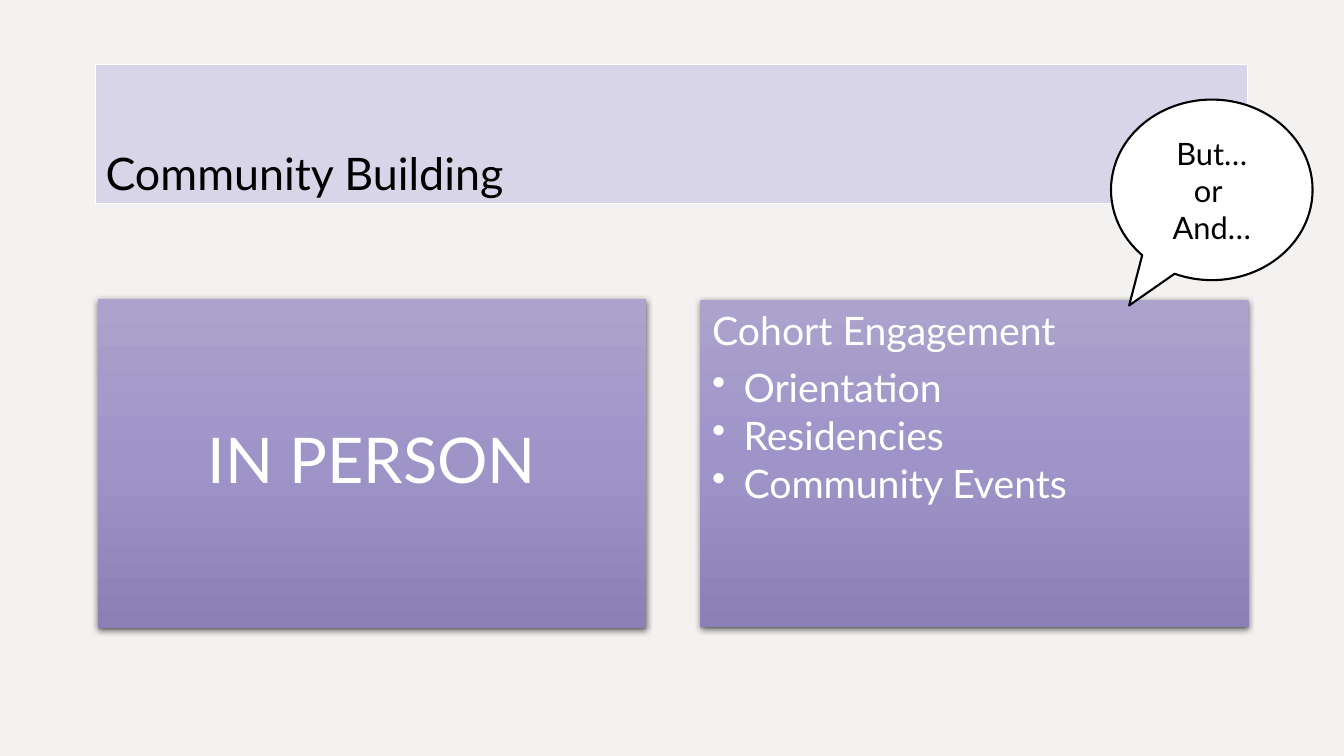
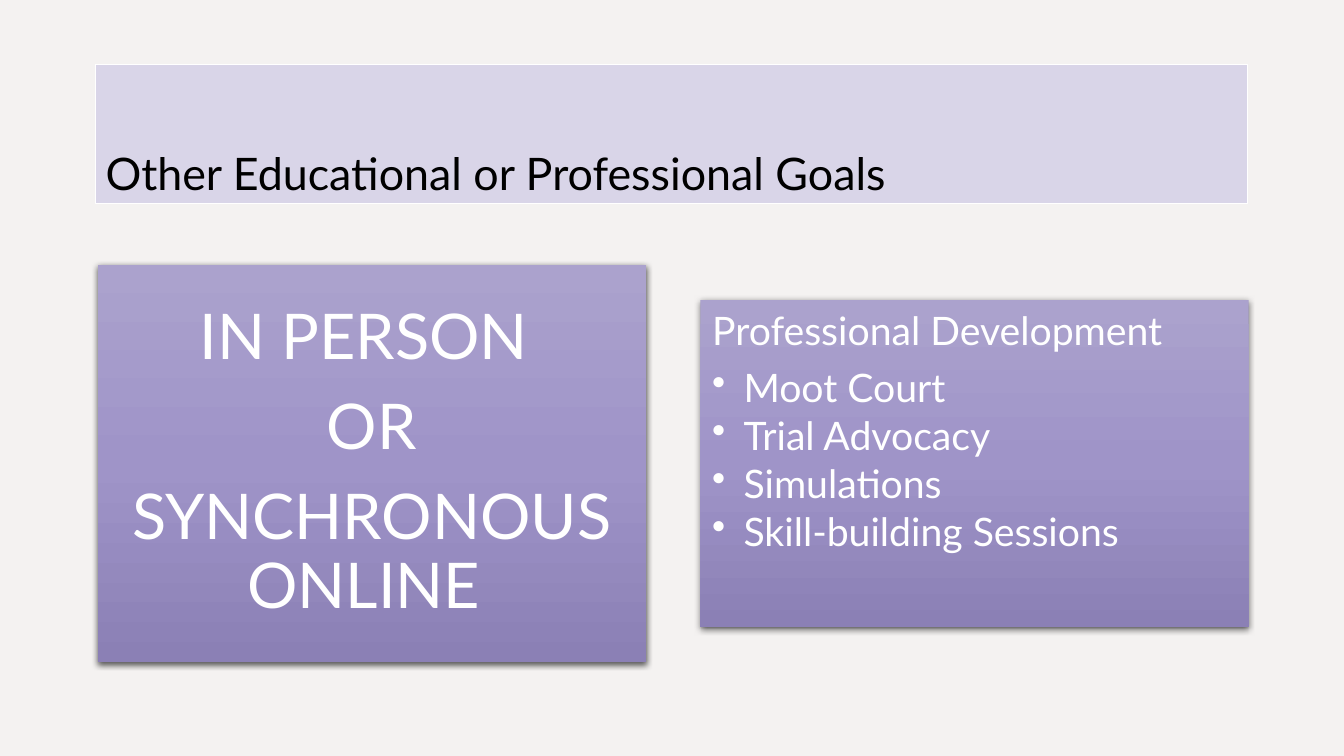
"""Build two slides on in-person and online learning goals."""
from copy import deepcopy
from dataclasses import dataclass

from lxml import etree
from pptx import Presentation
from pptx.dml.color import RGBColor
from pptx.enum.shapes import MSO_SHAPE
from pptx.enum.text import MSO_ANCHOR, PP_ALIGN
from pptx.oxml.ns import qn
from pptx.util import Cm, Pt

RECTANGLE = MSO_SHAPE.RECTANGLE
BUBBLE = MSO_SHAPE.OVAL_CALLOUT
TOP, MIDDLE, BOTTOM = MSO_ANCHOR.TOP, MSO_ANCHOR.MIDDLE, MSO_ANCHOR.BOTTOM
LEFT, CENTER = PP_ALIGN.LEFT, PP_ALIGN.CENTER

BLACK = RGBColor(0x00, 0x00, 0x00)
WHITE = RGBColor(0xFF, 0xFF, 0xFF)
BACKDROP = RGBColor(0xF4, 0xF2, 0xF1)
BAND = RGBColor(0xD9, 0xD5, 0xE8)
CARD_GRADIENT = (
    (0.0, RGBColor(0xAB, 0xA2, 0xCD)),
    (0.5, RGBColor(0x9F, 0x94, 0xC8)),
    (1.0, RGBColor(0x8B, 0x80, 0xB5)),
)

FONT = "Lato"
CARD_WIDTH = Cm(13.82)
CARD_MIDDLE = Cm(11.68)
FORMAT_LEFT, TOPIC_LEFT = Cm(2.46), Cm(17.65)
TOPIC_HEIGHT = Cm(8.23)
BULLET_INDENT = Cm(0.79)
HEADING_GAP, BULLET_GAP = 0.35, 0.15


@dataclass(frozen=True)
class GoalSlide:
    title: str
    formats: tuple[str, ...]
    format_height: int
    topic: str
    activities: tuple[str, ...]
    remark: tuple[str, ...] = ()


GOAL_SLIDES = (
    GoalSlide("Community Building", ("IN PERSON",), Cm(8.28),
              "Cohort Engagement",
              ("Orientation", "Residencies", "Community Events"),
              ("But…", "or ", "And…")),
    GoalSlide("Other Educational or Professional Goals",
              ("IN PERSON ", "OR", "SYNCHRONOUS ONLINE "), Cm(10.01),
              "Professional Development",
              ("Moot Court", "Trial Advocacy", "Simulations",
               "Skill-building Sessions")),
)


def write(shape, lines: tuple[str, ...], size: int, color: RGBColor,
          align, anchor) -> list:
    """Fill a shape with one paragraph per line and return the paragraphs."""
    frame = shape.text_frame
    frame.word_wrap = True
    frame.vertical_anchor = anchor
    frame.text = "\n".join(lines)
    for paragraph in frame.paragraphs:
        paragraph.alignment = align
        paragraph.font.name = FONT
        paragraph.font.size = Pt(size)
        paragraph.font.color.rgb = color
    return list(frame.paragraphs)


def add_outlined(slide, kind, box: tuple[int, int, int, int], fill: RGBColor,
                 line: RGBColor, line_width: float):
    """Add a flat shape with a solid fill and an outline."""
    shape = slide.shapes.add_shape(kind, *box)
    shape.shadow.inherit = False
    shape.fill.solid()
    shape.fill.fore_color.rgb = fill
    shape.line.color.rgb = line
    shape.line.width = Pt(line_width)
    return shape


def add_shadow(shape) -> None:
    """Give a shape a soft shadow that falls downwards."""
    shape.shadow.inherit = False
    effects = shape._element.spPr.find(qn("a:effectLst"))
    shadow = etree.SubElement(
        effects, qn("a:outerShdw"), blurRad=str(Pt(4.5)), dist=str(Pt(1.5)),
        dir="5400000", algn="ctr", rotWithShape="0")
    color = etree.SubElement(shadow, qn("a:srgbClr"), val=str(BLACK))
    etree.SubElement(color, qn("a:alpha"), val="63000")


def add_card(slide, left: int, height: int, inset: int):
    """Add a shaded card centred on the common middle line."""
    card = slide.shapes.add_shape(
        RECTANGLE, left, CARD_MIDDLE - height // 2, CARD_WIDTH, height)
    card.line.fill.background()
    card.fill.gradient()
    card.fill.gradient_angle = 270
    stops = card._element.spPr.find(qn("a:gradFill")).find(qn("a:gsLst"))
    stops.insert(1, deepcopy(stops[0]))
    for stop, (position, color) in zip(card.fill.gradient_stops, CARD_GRADIENT):
        stop.position = position
        stop.color.rgb = color
    add_shadow(card)
    frame = card.text_frame
    frame.margin_left = frame.margin_right = inset
    frame.margin_top = frame.margin_bottom = inset
    return card


def space(paragraph, gap: float) -> None:
    """Tighten the lines and leave a gap given as a share of the text size."""
    paragraph.line_spacing = 0.9
    paragraph.space_after = Pt(paragraph.font.size.pt * gap)


def add_bullet(paragraph) -> None:
    """Turn a paragraph into a bullet with a hanging indent."""
    properties = paragraph._p.get_or_add_pPr()
    properties.set("marL", str(BULLET_INDENT))
    properties.set("indent", str(-BULLET_INDENT))
    bullet = etree.Element(qn("a:buChar"), char="•")
    properties.find(qn("a:defRPr")).addprevious(bullet)


def add_title(slide, title: str) -> None:
    """Add the title band."""
    band = add_outlined(slide, RECTANGLE,
                        (Cm(2.41), Cm(1.63), Cm(29.03), Cm(3.51)),
                        BAND, WHITE, 0.75)
    write(band, (title,), 32, BLACK, LEFT, BOTTOM)


def add_formats(slide, goal: GoalSlide) -> None:
    """Add the left card with the teaching formats."""
    card = add_card(slide, FORMAT_LEFT, goal.format_height, Cm(0.48))
    for paragraph in write(card, goal.formats, 45, WHITE, CENTER, MIDDLE):
        space(paragraph, HEADING_GAP)


def add_topic(slide, goal: GoalSlide) -> None:
    """Add the right card with a heading and its activities."""
    card = add_card(slide, TOPIC_LEFT, TOPIC_HEIGHT, Cm(0.3))
    heading, *activities = write(card, (goal.topic, *goal.activities),
                                 28, WHITE, LEFT, TOP)
    space(heading, HEADING_GAP)
    for activity in activities:
        space(activity, BULLET_GAP)
        add_bullet(activity)


def add_remark(slide, remark: tuple[str, ...]) -> None:
    """Add the speech bubble over the right card."""
    bubble = add_outlined(slide, BUBBLE,
                          (Cm(28), Cm(2.51), Cm(5.08), Cm(4.55)),
                          WHITE, BLACK, 1.5)
    bubble.adjustments[0] = -0.41
    bubble.adjustments[1] = 0.64
    write(bubble, remark, 22, BLACK, CENTER, MIDDLE)


def main() -> None:
    """Build and save the presentation."""
    deck = Presentation()
    deck.slide_width, deck.slide_height = Cm(33.87), Cm(19.05)
    blank = deck.slide_layouts[6]
    for goal in GOAL_SLIDES:
        slide = deck.slides.add_slide(blank)
        slide.background.fill.solid()
        slide.background.fill.fore_color.rgb = BACKDROP
        add_title(slide, goal.title)
        add_formats(slide, goal)
        add_topic(slide, goal)
        if goal.remark:
            add_remark(slide, goal.remark)
    deck.save("out.pptx")


if __name__ == "__main__":
    main()
